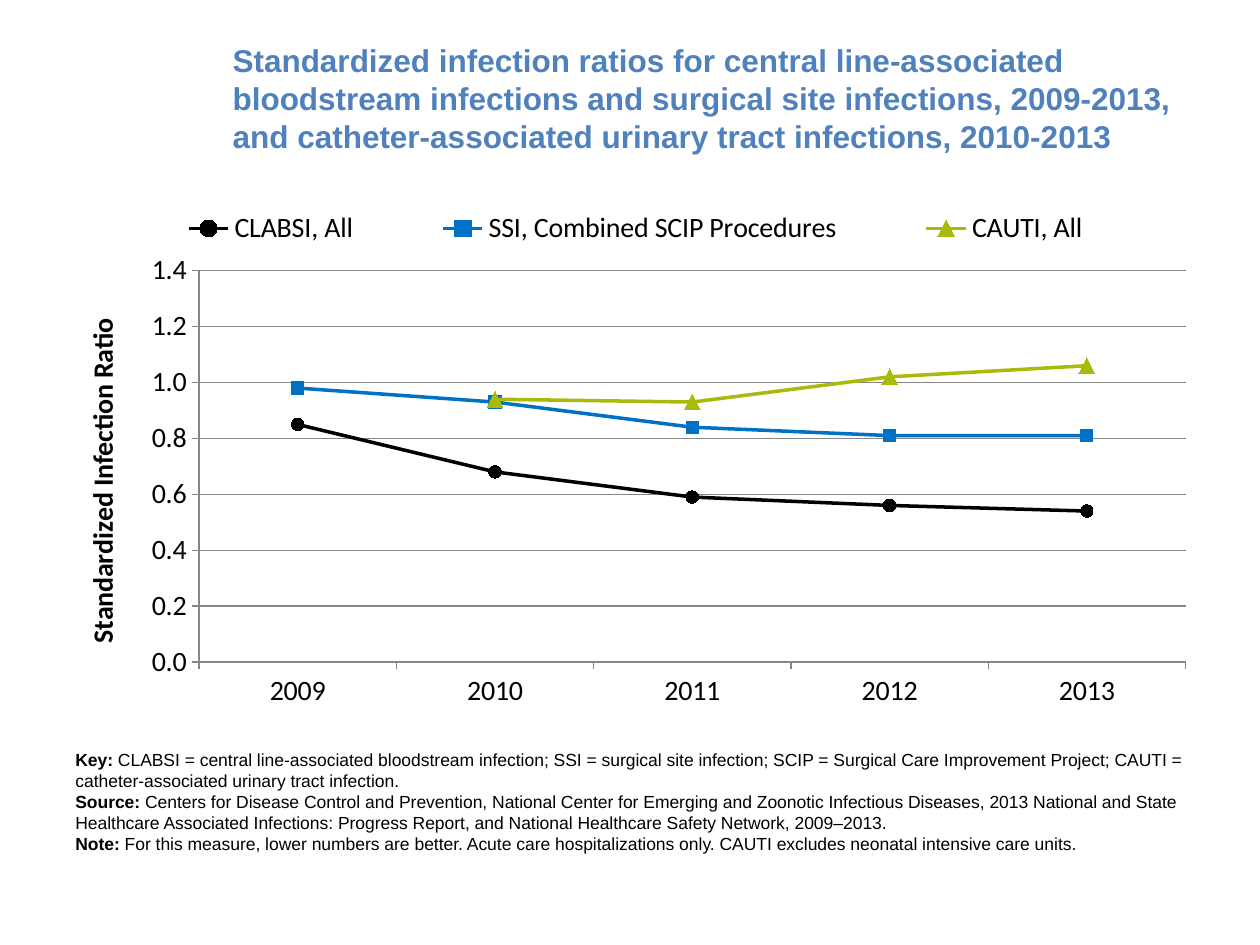
from lxml import etree
from pptx import Presentation
from pptx.chart.data import CategoryChartData
from pptx.dml.color import RGBColor
from pptx.enum.chart import XL_CHART_TYPE, XL_LEGEND_POSITION, XL_MARKER_STYLE, XL_TICK_MARK
from pptx.enum.text import MSO_ANCHOR, PP_ALIGN
from pptx.oxml.ns import qn
from pptx.util import Pt

LINE = XL_CHART_TYPE.LINE_MARKERS
TOP = XL_LEGEND_POSITION.TOP
CIRCLE = XL_MARKER_STYLE.CIRCLE
SQUARE = XL_MARKER_STYLE.SQUARE
TRIANGLE = XL_MARKER_STYLE.TRIANGLE
OUT = XL_TICK_MARK.OUTSIDE
LEFT = PP_ALIGN.LEFT
MIDDLE = MSO_ANCHOR.MIDDLE

BLACK = RGBColor(0x00, 0x00, 0x00)
BLUE = RGBColor(0x00, 0x72, 0xC6)
GREEN = RGBColor(0xAA, 0xBA, 0x0A)
GRAY = RGBColor(0x86, 0x86, 0x86)
TITLE_BLUE = RGBColor(0x4F, 0x81, 0xBD)

TITLE = (
    "Standardized infection ratios for central line-associated bloodstream "
    "infections and surgical site infections, 2009-2013, and "
    "catheter-associated urinary tract infections, 2010-2013"
)
YEARS = ["2009", "2010", "2011", "2012", "2013"]
SERIES = [
    ("CLABSI, All", [0.85, 0.68, 0.59, 0.56, 0.54], BLACK, CIRCLE, 7),
    ("SSI, Combined SCIP Procedures", [0.98, 0.93, 0.84, 0.81, 0.81], BLUE, SQUARE, 7),
    ("CAUTI, All", [None, 0.94, 0.93, 1.02, 1.06], GREEN, TRIANGLE, 9),
]
AXIS_TITLE = "Standardized Infection Ratio"
NOTES = [
    ("Key: ", "CLABSI = central line-associated bloodstream infection; "
     "SSI = surgical site infection; SCIP = Surgical Care Improvement Project; "
     "CAUTI = catheter-associated urinary tract infection."),
    ("Source: ", "Centers for Disease Control and Prevention, National Center for "
     "Emerging and Zoonotic Infectious Diseases, 2013 National and State Healthcare "
     "Associated Infections: Progress Report, and National Healthcare Safety "
     "Network, 2009–2013."),
    ("Note: ", "For this measure, lower numbers are better. Acute care "
     "hospitalizations only. CAUTI excludes neonatal intensive care units."),
]

SCALE = 914400 / 126
TITLE_BOX = (220, 38, 977, 120)
CHART_BOX = (63, 202, 1134, 529)
NOTE_BOX = (63, 743, 1134, 118)
PLOT_AREA = (0.12, 0.13, 0.87, 0.74)
LEGEND_AREA = (0.04, 0.01, 0.93, 0.08)


def emu(box):
    return [round(n * SCALE) for n in box]


def style(font, name, size, color=BLACK, bold=None):
    font.name = name
    font.size = Pt(size)
    font.color.rgb = color
    font.bold = bold


def set_layout(parent, index, area, inner=False):
    """Give a chart part a fixed place, in fractions of the chart."""
    for old in parent.findall(qn("c:layout")):
        parent.remove(old)
    layout = etree.Element(qn("c:layout"))
    manual = etree.SubElement(layout, qn("c:manualLayout"))
    pairs = [("layoutTarget", "inner")] if inner else []
    pairs += [("xMode", "edge"), ("yMode", "edge"), *zip("xywh", area)]
    for tag, val in pairs:
        etree.SubElement(manual, qn("c:" + tag), val=str(val))
    parent.insert(index, layout)


def add_title(slide):
    title = slide.shapes.title
    title.left, title.top, title.width, title.height = emu(TITLE_BOX)
    frame = title.text_frame
    frame.text = TITLE
    frame.vertical_anchor = MIDDLE
    para = frame.paragraphs[0]
    para.alignment = LEFT
    style(para.font, "Arial", 18, TITLE_BLUE, True)


def add_ratios(slide):
    data = CategoryChartData(number_format="0.00")
    data.categories = YEARS
    for name, vals, *_ in SERIES:
        data.add_series(name, vals)
    chart = slide.shapes.add_chart(LINE, *emu(CHART_BOX), data).chart
    style(chart.font, "Arial", 10)
    chart.has_title = False

    chart.has_legend = True
    chart.legend.position = TOP
    chart.legend.include_in_layout = False
    style(chart.legend.font, "Calibri", 16)

    for axis in (chart.category_axis, chart.value_axis):
        axis.major_tick_mark = OUT
        axis.format.line.color.rgb = GRAY
        style(axis.tick_labels.font, "Calibri", 16)
    ratio = chart.value_axis
    ratio.minimum_scale, ratio.maximum_scale, ratio.major_unit = 0, 1.4, 0.2
    ratio.tick_labels.number_format = "0.0"
    ratio.tick_labels.number_format_is_linked = False
    ratio.has_major_gridlines = True
    ratio.major_gridlines.format.line.color.rgb = GRAY
    frame = ratio.axis_title.text_frame
    frame.text = AXIS_TITLE
    style(frame.paragraphs[0].font, "Calibri", 16, bold=True)

    plot = chart.plots[0]
    plot.vary_by_categories = False
    for line, (_, _, color, mark, size) in zip(plot.series, SERIES):
        line.smooth = False
        line.format.line.color.rgb = color
        line.format.line.width = Pt(2)
        line.marker.style = mark
        line.marker.size = size
        line.marker.format.fill.solid()
        line.marker.format.fill.fore_color.rgb = color
        line.marker.format.line.color.rgb = color

    root = chart.element
    set_layout(root.find(".//" + qn("c:plotArea")), 0, PLOT_AREA, inner=True)
    set_layout(root.find(".//" + qn("c:legend")), 1, LEGEND_AREA)


def add_notes(slide):
    frame = slide.shapes.add_textbox(*emu(NOTE_BOX)).text_frame
    frame.word_wrap = True
    for i, (label, text) in enumerate(NOTES):
        para = frame.paragraphs[0] if i == 0 else frame.add_paragraph()
        style(para.font, "Arial", 10)
        head = para.add_run()
        head.text = label
        head.font.bold = True
        para.add_run().text = text


def main():
    deck = Presentation()
    deck.slide_width, deck.slide_height = emu((1260, 945))
    slide = deck.slides.add_slide(deck.slide_layouts[5])
    add_title(slide)
    add_notes(slide)
    add_ratios(slide)
    deck.save("out.pptx")


if __name__ == "__main__":
    main()
